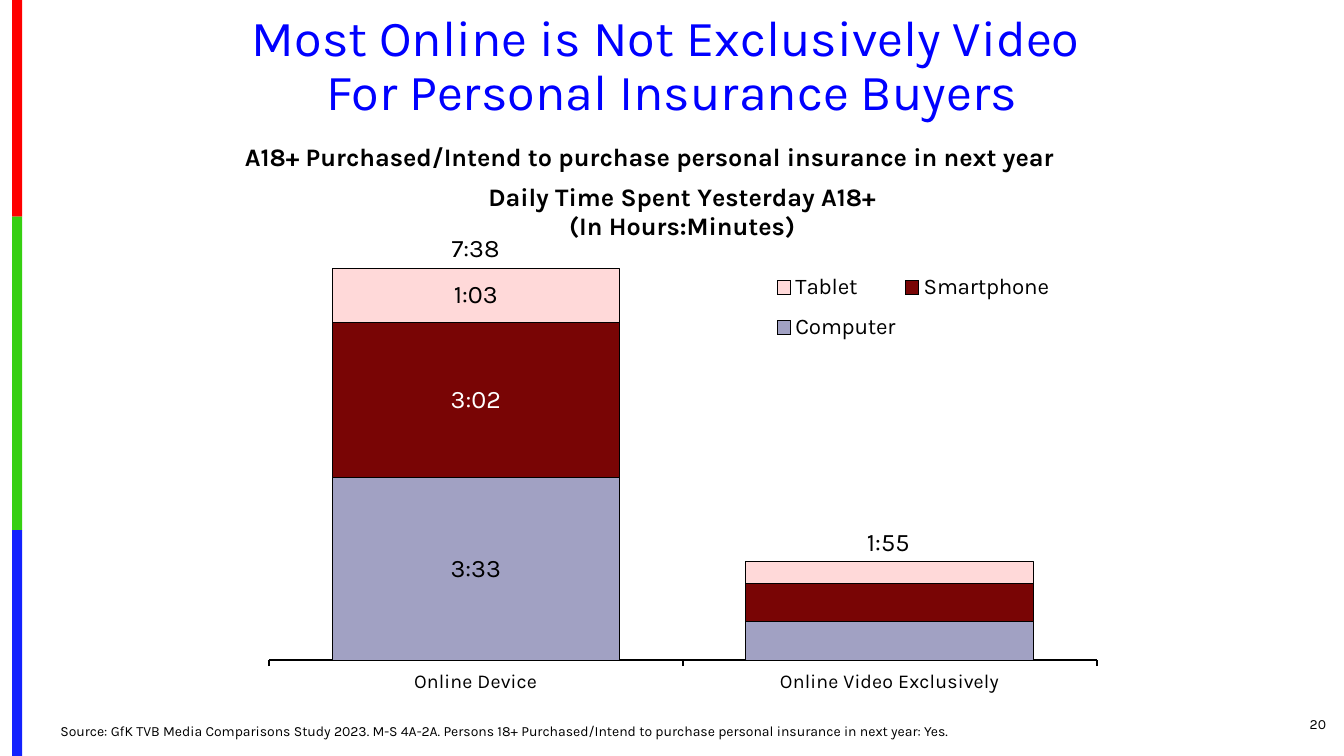
"""Build the slide on daily online time among personal insurance buyers."""
from lxml import etree
from pptx import Presentation
from pptx.chart.data import CategoryChartData
from pptx.dml.color import RGBColor
from pptx.enum.chart import XL_CHART_TYPE as CT, XL_LEGEND_POSITION as LP, XL_TICK_MARK as TM
from pptx.enum.shapes import MSO_SHAPE
from pptx.enum.text import MSO_ANCHOR as VA, PP_ALIGN as AL
from pptx.oxml import parse_xml
from pptx.oxml.ns import nsdecls, qn
from pptx.util import Inches, Pt

FONT = "Karla"
TIME = "h:mm;@"


def rgb(color):
    return RGBColor.from_string(color)


def add_text(lines, box, size, color="000000", bold=False, align=AL.LEFT,
             anchor=VA.TOP, wrap=True, spacing=None):
    tf = s.shapes.add_textbox(*map(Inches, box)).text_frame
    tf.word_wrap = wrap
    tf.vertical_anchor = anchor
    for i, line in enumerate(lines):
        p = tf.add_paragraph() if i else tf.paragraphs[0]
        p.alignment = align
        p.line_spacing = spacing
        r = p.add_run()
        r.text = line
        r.font.name, r.font.size, r.font.bold = FONT, Pt(size), bold
        r.font.color.rgb = rgb(color)


prs = Presentation()
prs.slide_width, prs.slide_height = Inches(13.33), Inches(7.5)
s = prs.slides.add_slide(prs.slide_layouts[6])

top = 0
for height, color in [(2.15, "FE0000"), (3.11, "36CF12"), (2.24, "1322FE")]:
    sp = s.shapes.add_shape(MSO_SHAPE.RECTANGLE, Inches(0.12), Inches(top),
                            Inches(0.1), Inches(height))
    sp.shadow.inherit = False
    sp.fill.solid()
    sp.fill.fore_color.rgb = rgb(color)
    sp.line.fill.background()
    top += height

add_text(["20"], (12.17, 6.98, 1.08, 0.4), 10, align=AL.RIGHT, anchor=VA.MIDDLE)
add_text(["Source: GfK TVB Media Comparisons Study 2023.\u00a0M-S 4A-2A. Persons 18+ "
          "Purchased/Intend to purchase personal insurance in next year: Yes."],
         (0.5, 7.14, 10.75, 0.25), 10, anchor=VA.BOTTOM, spacing=0.9)
add_text(["Most Online is Not Exclusively Video ", "For Personal Insurance Buyers"],
         (0.29, 0.08, 12.75, 1.19), 36, "0000FF", align=AL.CENTER, spacing=0.9)

devices = [
    ("Computer", (0.147917, 0.03125), "A1A1C3", "000000"),
    ("Smartphone", (0.126389, 0.03125), "790505", "FFFFFF"),
    ("Tablet", (0.04375, 0.017361), "FFD9D9", "000000"),
]
data = CategoryChartData(number_format=TIME)
data.categories = ["Online Device", "Online Video Exclusively"]
for name, values, _, _ in devices:
    data.add_series(name, values)
chart = s.shapes.add_chart(CT.COLUMN_STACKED, Inches(1.92), Inches(0.77),
                           Inches(9.33), Inches(6.25), data).chart
chart.font.name, chart.font.size = FONT, Pt(10)
chart.font.color.rgb = rgb("000000")

chart.has_title = True
tf = chart.chart_title.text_frame
for i, line in enumerate(["Daily Time Spent Yesterday A18+", "(In Hours:Minutes)"]):
    p = tf.add_paragraph() if i else tf.paragraphs[0]
    r = p.add_run()
    r.text = line
    r.font.name, r.font.size, r.font.bold = FONT, Pt(18), True
    r.font.color.rgb = rgb("000000")

plot = chart.plots[0]
plot.gap_width, plot.overlap, plot.vary_by_categories = 44, 100, False
for series, (_, _, color, label_color) in zip(plot.series, devices):
    series.format.fill.solid()
    series.format.fill.fore_color.rgb = rgb(color)
    series.format.line.color.rgb = rgb("000000")
    series.format.line.width = Pt(0.75)
    font = series.points[0].data_label.font
    font.name, font.size, font.bold = FONT, Pt(18), False
    font.color.rgb = rgb(label_color)
    labels = series.data_labels
    labels.show_value = False
    labels.number_format, labels.number_format_is_linked = TIME, False
    label = next(series.points[0].data_label.font._element.iterancestors(qn("c:dLbl")))
    label.insert(1, parse_xml(
        f'<c:numFmt {nsdecls("c")} formatCode="{TIME}" sourceLinked="0"/>'))

axis = chart.category_axis
axis.major_tick_mark = TM.OUTSIDE
axis.tick_labels.font.size = Pt(14)
axis.tick_labels.font.name = FONT
axis.format.line.color.rgb = rgb("000000")
axis.format.line.width = Pt(1.5)
axis = chart.value_axis
axis.visible = axis.has_major_gridlines = False
axis.minimum_scale, axis.maximum_scale = 0, 0.35
axis.tick_labels.number_format = TIME
axis.tick_labels.number_format_is_linked = False

chart.has_legend = True
chart.legend.position = LP.RIGHT
chart.legend.include_in_layout = False
chart.legend.font.name, chart.legend.font.size = FONT, Pt(16)

space = chart._chartSpace
for tag, before, target, places in [
    ("c:title", "c:overlay", None, {"x": 0.31, "y": 0.16}),
    ("c:legend", "c:overlay", None, {"x": 0.61, "y": 0.29, "w": 0.31, "h": 0.15}),
    ("c:plotArea", "c:barChart", "inner", {"x": 0.08, "y": 0.24, "w": 0.88, "h": 0.685}),
]:
    parent = next(space.iter(qn(tag)))
    for old in parent.findall(qn("c:layout")):
        parent.remove(old)
    layout = parse_xml(f'<c:layout {nsdecls("c")}><c:manualLayout/></c:layout>')
    settings = [("layoutTarget", target)] if target else []
    settings += [(f"{side}Mode", "edge") for side in "xy"] + list(places.items())
    for key, value in settings:
        etree.SubElement(layout[0], qn(f"c:{key}")).set("val", str(value))
    parent.find(qn(before)).addprevious(layout)

add_text(["1:55"], (8.5, 5.17, 0.71, 0.4), 18, wrap=False)
add_text(["7:38"], (4.38, 2.26, 0.71, 0.4), 18, wrap=False)
add_text(["A18+ Purchased/Intend to purchase personal insurance in next year"],
         (2.33, 1.35, 9, 0.4), 18, bold=True)

prs.save("out.pptx")
